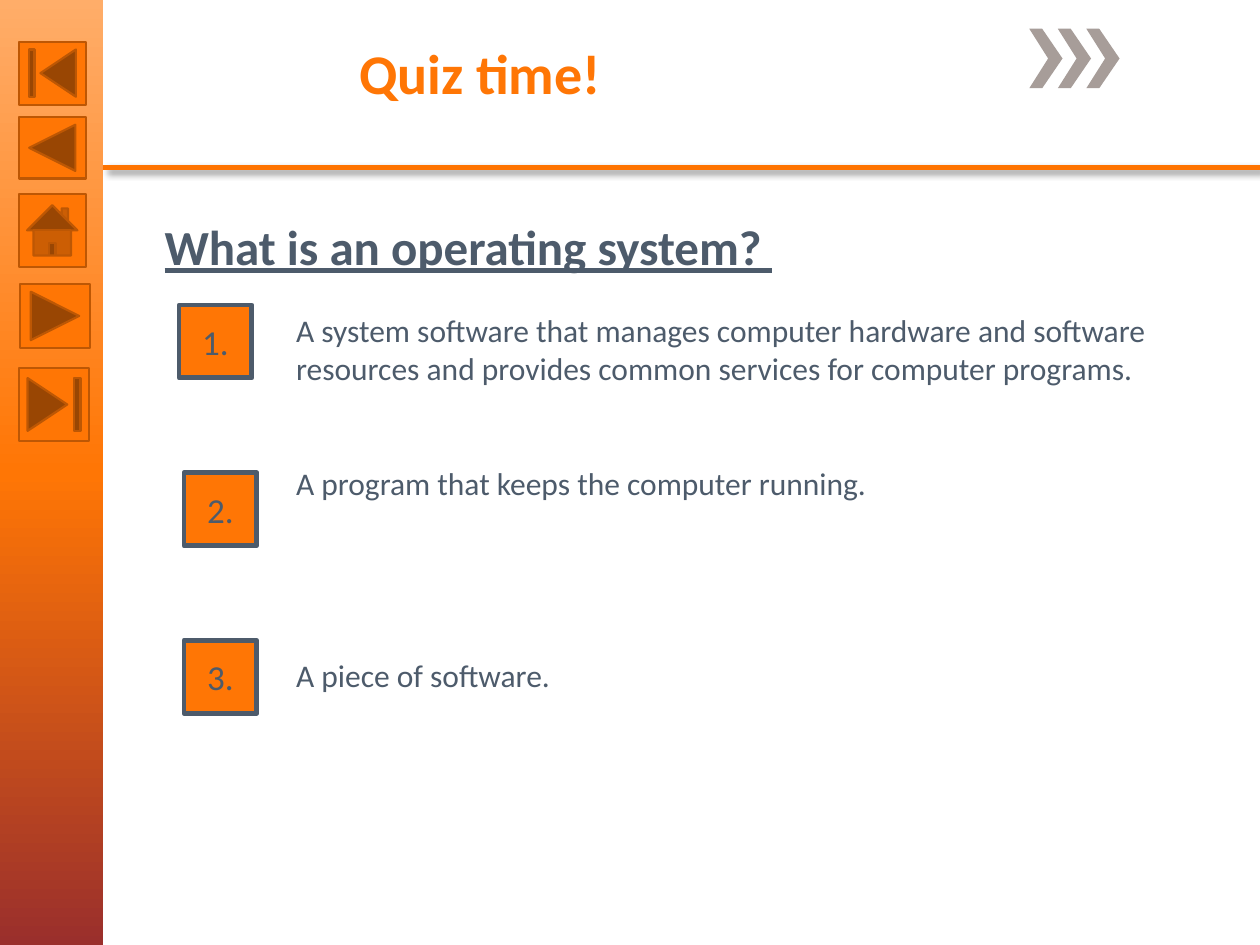
from copy import deepcopy
from lxml.etree import SubElement
from pptx import Presentation
from pptx.dml.color import RGBColor
from pptx.enum.shapes import MSO_CONNECTOR, MSO_SHAPE
from pptx.enum.text import MSO_ANCHOR, PP_ALIGN
from pptx.oxml.ns import qn
from pptx.util import Cm, Pt

PEACH = RGBColor(0xFF, 0xAD, 0x69)
ORANGE = RGBColor(0xFF, 0x76, 0x05)
RED = RGBColor(0x9A, 0x2F, 0x2C)
RUST = RGBColor(0xBD, 0x57, 0x04)
RULE = RGBColor(0xFE, 0x73, 0x00)
GREY = RGBColor(0xA7, 0x9D, 0x99)
SLATE = RGBColor(0x4D, 0x5B, 0x6B)

# Content: lengths in cm
WIDTH, HEIGHT, BAR = 25.4, 19.05, 2.08
TITLE = "Quiz time!"
QUESTION = "What is an operating system? "
ANSWERS = [  # text, space before in points, left edge of number box
    ("A system software that manages computer hardware and software "
     "resources and provides common services for computer programs.", 0, 3.61),
    ("A program that keeps the computer running.", 44, 3.71),
    ("A piece of software.", 88, 3.71),
]
BUTTONS = [  # kind, left, top, width, height
    (MSO_SHAPE.ACTION_BUTTON_BEGINNING, 0.38, 0.84, 1.35, 1.27),
    (MSO_SHAPE.ACTION_BUTTON_BACK_OR_PREVIOUS, 0.38, 2.36, 1.35, 1.24),
    (MSO_SHAPE.ACTION_BUTTON_HOME, 0.38, 3.91, 1.35, 1.47),
    (MSO_SHAPE.ACTION_BUTTON_FORWARD_OR_NEXT, 0.41, 5.72, 1.4, 1.3),
    (MSO_SHAPE.ACTION_BUTTON_END, 0.38, 7.42, 1.42, 1.47),
]
CHEVRON = [(0.26, 0), (0, 0), (0.38, 0.6), (0, 1.2), (0.26, 1.2), (0.67, 0.6)]
ROW_TOP, ROW_STEP, SIDE = 6.15, 3.38, 1.47

deck = Presentation()
deck.slide_width, deck.slide_height = Cm(WIDTH), Cm(HEIGHT)
slide = deck.slides.add_slide(deck.slide_layouts[6])
shapes = slide.shapes


def add_box(kind, area, line=None, weight=0):
    box = shapes.add_shape(kind, *map(Cm, area))
    box.shadow.inherit = False
    box.fill.solid()
    box.fill.fore_color.rgb = ORANGE
    if line is None:
        box.line.fill.background()
    else:
        box.line.color.rgb = line
        box.line.width = Pt(weight)
    return box


def add_frame(area):
    frame = shapes.add_textbox(*map(Cm, area)).text_frame
    frame.word_wrap = True
    return frame


def write(para, text, size, color=SLATE, bold=False):
    para.text = text
    font = para.font
    font.name, font.size, font.bold = "Calibri", Pt(size), bold
    font.color.rgb = color


# Sidebar with a three-stop gradient
bar = add_box(MSO_SHAPE.RECTANGLE, (0, 0, BAR, HEIGHT))
bar.fill.gradient()
bar.fill.gradient_angle = 270
stops = bar._element.spPr.find(".//" + qn("a:gsLst"))
stops.insert(1, deepcopy(stops[0]))
for stop, color, pos in zip(bar.fill.gradient_stops, (PEACH, ORANGE, RED), (0, 0.5, 1)):
    stop.color.rgb = color
    stop.position = pos

# Chevrons
for i in range(3):
    left, top = 20.75 + i * 0.575, 0.58
    points = [(Cm(left + x), Cm(top + y)) for x, y in CHEVRON]
    maker = shapes.build_freeform(*points[0])
    maker.add_line_segments(points[1:], close=True)
    arrow = maker.convert_to_shape()
    arrow.shadow.inherit = False
    arrow.fill.solid()
    arrow.fill.fore_color.rgb = GREY
    arrow.line.fill.background()

# Navigation buttons
for kind, *area in BUTTONS:
    add_box(kind, area, RUST, 1.25)

# Header rule with a soft shadow
rule = shapes.add_connector(MSO_CONNECTOR.STRAIGHT, Cm(BAR), Cm(3.38), Cm(WIDTH), Cm(3.38))
rule.line.color.rgb = RULE
rule.line.width = Pt(3)
effect = SubElement(rule._element.spPr, qn("a:effectLst"))
shade = SubElement(effect, qn("a:outerShdw"), blurRad=str(Pt(4)), dist=str(Pt(3)),
                   dir="2700000", algn="tl", rotWithShape="0")
tint = SubElement(shade, qn("a:srgbClr"), val="000000")
SubElement(tint, qn("a:alpha"), val="40000")

# Title and question
write(add_frame((6.99, 0.66, 19.69, 2.41)).paragraphs[0], TITLE, 32, ORANGE, True)
ask = add_frame((3.07, 4.24, 13.77, 1.45)).paragraphs[0]
write(ask, QUESTION, 28, bold=True)
ask.font.underline = True

# Answers and their number boxes
body = add_frame((5.72, ROW_TOP, 17.78, 7.95))
for i, (text, gap, left) in enumerate(ANSWERS):
    para = body.add_paragraph() if i else body.paragraphs[0]
    write(para, text, 18)
    para.space_before = Pt(gap)
    box = add_box(MSO_SHAPE.RECTANGLE, (left, ROW_TOP + i * ROW_STEP, SIDE, SIDE), SLATE, 2.75)
    box.text_frame.vertical_anchor = MSO_ANCHOR.MIDDLE
    label = box.text_frame.paragraphs[0]
    write(label, f"{i + 1}.", 20)
    label.alignment = PP_ALIGN.CENTER

deck.save("out.pptx")
